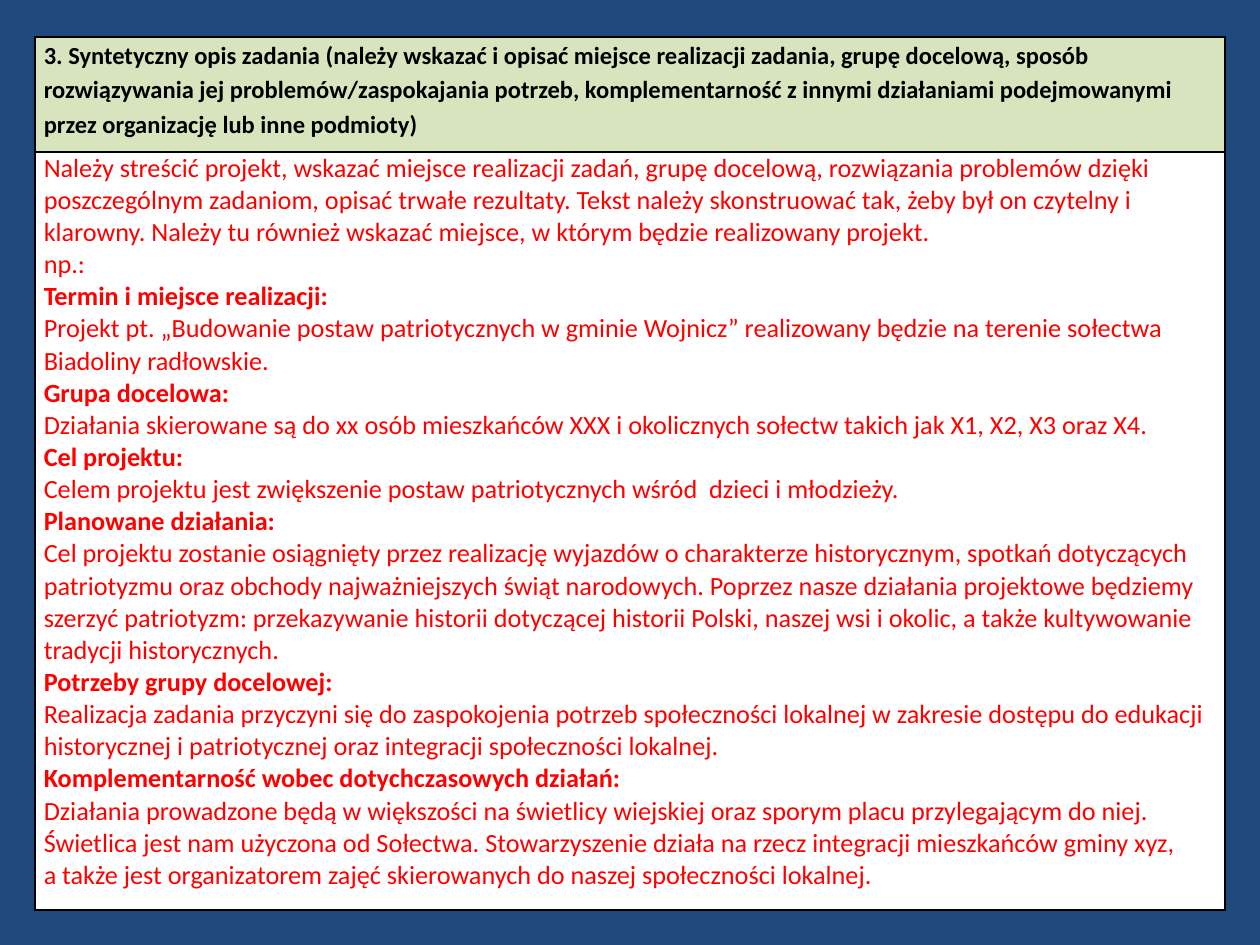
import pptx
import pptx.dml.color
import pptx.enum.text
import pptx.oxml
import pptx.oxml.ns
import pptx.util

Pt = pptx.util.Pt
RGBColor = pptx.dml.color.RGBColor

NAVY = RGBColor(0x1F, 0x49, 0x7D)
GREEN = RGBColor(0xD7, 0xE4, 0xBD)
WHITE = RGBColor(0xFF, 0xFF, 0xFF)
BLACK = RGBColor(0x00, 0x00, 0x00)
RED = RGBColor(0xFF, 0x00, 0x00)

COLUMN_WIDTHS = [219, 109.5, 119, 90.5, 142]
ROW_HEIGHTS = [66, 433]

HEADING = (
    "3. Syntetyczny opis zadania (należy wskazać i opisać miejsce realizacji zadania, "
    "grupę docelową, sposób rozwiązywania jej problemów/zaspokajania potrzeb, "
    "komplementarność z innymi działaniami podejmowanymi przez organizację lub inne podmioty)"
)
INTRODUCTION = [
    "Należy streścić projekt, wskazać miejsce realizacji zadań, grupę docelową, rozwiązania "
    "problemów dzięki poszczególnym zadaniom, opisać trwałe rezultaty. Tekst należy "
    "skonstruować tak, żeby był on czytelny i klarowny. Należy tu również wskazać miejsce, "
    "w którym będzie realizowany projekt.",
    "np.:",
]
SECTIONS = [
    ("Termin i miejsce realizacji:",
     "Projekt pt. „Budowanie postaw patriotycznych w gminie Wojnicz” realizowany będzie "
     "na terenie sołectwa Biadoliny radłowskie."),
    ("Grupa docelowa:",
     "Działania skierowane są do xx osób mieszkańców XXX i okolicznych sołectw takich jak "
     "X1, X2, X3 oraz X4."),
    ("Cel projektu:",
     "Celem projektu jest zwiększenie postaw patriotycznych wśród  dzieci i młodzieży."),
    ("Planowane działania:",
     "Cel projektu zostanie osiągnięty przez realizację wyjazdów o charakterze historycznym, "
     "spotkań dotyczących patriotyzmu oraz obchody najważniejszych świąt narodowych. Poprzez "
     "nasze działania projektowe będziemy szerzyć patriotyzm: przekazywanie historii "
     "dotyczącej historii Polski, naszej wsi i okolic, a także kultywowanie tradycji "
     "historycznych."),
    ("Potrzeby grupy docelowej:",
     "Realizacja zadania przyczyni się do zaspokojenia potrzeb społeczności lokalnej w "
     "zakresie dostępu do edukacji historycznej i patriotycznej oraz integracji społeczności "
     "lokalnej."),
    ("Komplementarność wobec dotychczasowych działań:",
     "Działania prowadzone będą w większości na świetlicy wiejskiej oraz sporym placu "
     "przylegającym do niej. Świetlica jest nam użyczona od Sołectwa. Stowarzyszenie działa "
     "na rzecz integracji mieszkańców gminy xyz, \n"
     "a także jest organizatorem zajęć skierowanych do naszej społeczności lokalnej."),
]


def write_paragraph(para, text, *, size, color, bold=False, spacing=1.0):
    """Write text into a paragraph, with a line break at each newline."""
    para.line_spacing = spacing
    para.alignment = pptx.enum.text.PP_ALIGN.LEFT
    for number, line in enumerate(text.split("\n")):
        if number:
            para.add_line_break()
        span = para.add_run()
        span.text = line
        span.font.name = "Calibri"
        span.font.size = Pt(size)
        span.font.bold = bold
        span.font.color.rgb = color


def draw_borders(cell, color, width):
    """Give a cell a solid border on all four sides."""
    properties = cell._tc.get_or_add_tcPr()
    for position, side in enumerate(("lnL", "lnR", "lnT", "lnB")):
        border = pptx.oxml.parse_xml(
            f'<a:{side} {pptx.oxml.ns.nsdecls("a")} w="{Pt(width)}"><a:solidFill>'
            f'<a:srgbClr val="{color}"/></a:solidFill></a:{side}>'
        )
        properties.insert(position, border)


def add_form_table(page):
    """Add the bordered table and return the merged cell of each row."""
    frame = page.shapes.add_table(
        len(ROW_HEIGHTS), len(COLUMN_WIDTHS),
        Pt(20), Pt(21), Pt(sum(COLUMN_WIDTHS)), Pt(sum(ROW_HEIGHTS)),
    )
    table = frame.table
    table.first_row = False
    table.horz_banding = False
    for column, width in zip(table.columns, COLUMN_WIDTHS):
        column.width = Pt(width)
    for row, height, fill in zip(table.rows, ROW_HEIGHTS, (GREEN, WHITE)):
        row.height = Pt(height)
        for cell in row.cells:
            cell.fill.solid()
            cell.fill.fore_color.rgb = fill
            cell.margin_left = cell.margin_right = Pt(5)
            cell.margin_top = cell.margin_bottom = 0
            draw_borders(cell, BLACK, 1)
        row.cells[0].merge(row.cells[len(COLUMN_WIDTHS) - 1])
    return [row.cells[0] for row in table.rows]


def fill_description(cell):
    """Write the introduction and the titled sections into the lower cell."""
    entries = [(text, False) for text in INTRODUCTION]
    for title, body in SECTIONS:
        entries += [(title, True), (body, False)]
    frame = cell.text_frame
    for number, (text, bold) in enumerate(entries):
        para = frame.add_paragraph() if number else frame.paragraphs[0]
        write_paragraph(para, text, size=15, color=RED, bold=bold)


def main():
    """Build the slide and save it."""
    deck = pptx.Presentation()
    deck.slide_width, deck.slide_height = Pt(720), Pt(540)
    page = deck.slides.add_slide(deck.slide_layouts[6])
    page.background.fill.solid()
    page.background.fill.fore_color.rgb = NAVY
    heading, description = add_form_table(page)
    write_paragraph(heading.text_frame.paragraphs[0], HEADING,
                    size=14, color=BLACK, bold=True, spacing=1.15)
    fill_description(description)
    deck.save("out.pptx")


if __name__ == "__main__":
    main()
